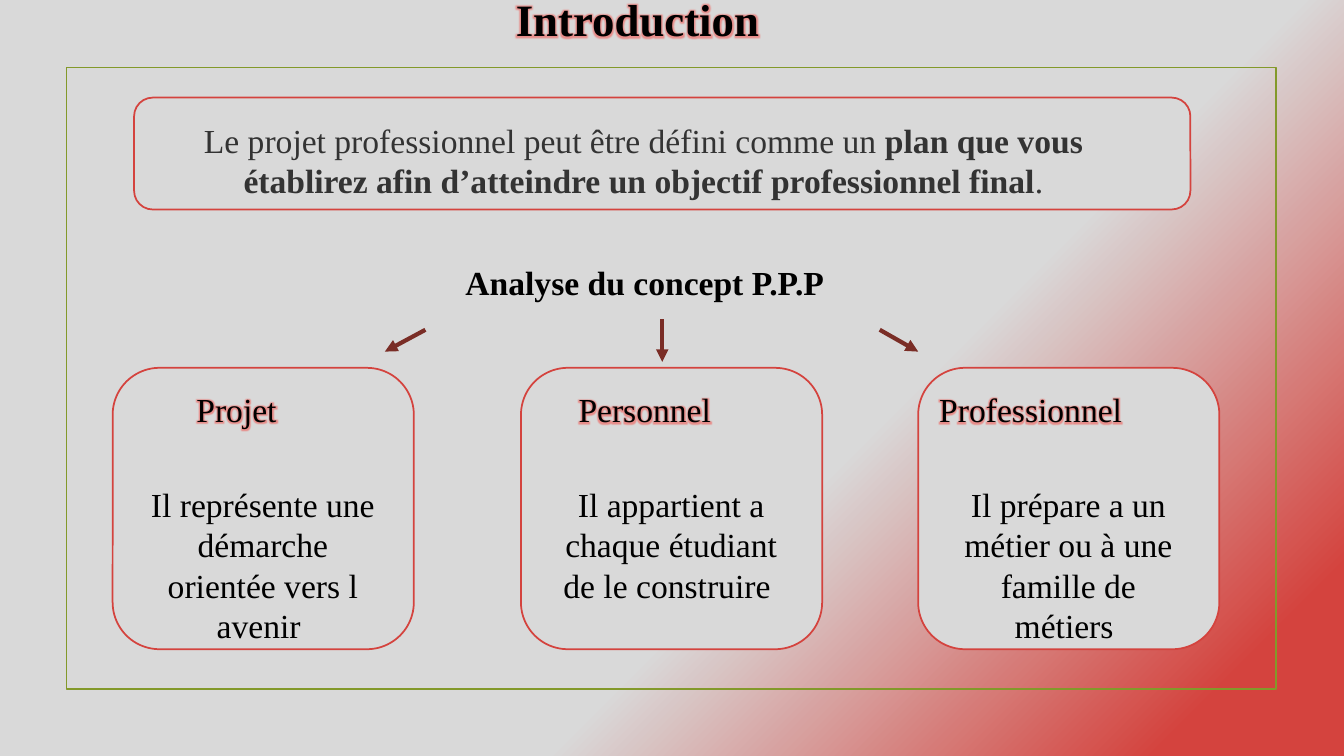
"""Build the introduction slide about the professional project."""
from lxml.etree import SubElement
from pptx import Presentation
from pptx.dml.color import RGBColor
from pptx.enum.shapes import MSO_CONNECTOR as Connector, MSO_SHAPE as Shape
from pptx.enum.text import MSO_AUTO_SIZE as AutoSize, PP_ALIGN as Align
from pptx.oxml import parse_xml
from pptx.oxml.ns import nsdecls, qn
from pptx.util import Cm, Pt

RED, GREY, GREEN, BROWN, BLACK, DARK = "D4433E", "D9D9D9", "83992A", "7A2D26", "000000", "333333"
BACKGROUND_STOPS = [(2, GREY), (32, GREY), (62, GREY), (91, RED)]
CARD_TOP, CARD_WIDTH, CARD_HEIGHT = 9.27, 7.59, 7.09
CARDS = [
    (2.84, 4.7, 5.23, "Projet", "Il représente une démarche orientée vers l avenir "),
    (13.13, 14.33, 5.23, "Personnel", "Il appartient a chaque étudiant de le construire "),
    (23.14, 23.42, 7.24, "Professionnel", "Il prépare a un métier ou à une famille de métiers "),
]
ARROWS = [(10.72, 8.31, 9.7, 8.86), (16.69, 8.05, 16.69, 9.12), (22.17, 8.31, 23.14, 8.86)]
DEFINITION = [
    ("Le projet professionnel peut être défini comme un ", False),
    ("plan que vous établirez afin d’atteindre un objectif professionnel final", True),
    (".", False),
]


def color(value):
    """Return the colour for a hex string."""
    return RGBColor.from_string(value)


def set_attributes(target, values):
    """Set each attribute named in a dict."""
    for name, value in values.items():
        setattr(target, name, value)


def paint_background(slide):
    """Fill the background with the diagonal gradient."""
    slide.background.fill.gradient()
    gradient = slide.element.find(".//" + qn("a:gradFill"))
    stops = gradient.find(qn("a:gsLst"))
    for stop in list(stops):
        stops.remove(stop)
    for position, value in BACKGROUND_STOPS:
        stop = SubElement(stops, qn("a:gs"), pos=str(position * 1000))
        SubElement(stop, qn("a:srgbClr"), val=value)
    set_direction = gradient.find(qn("a:lin")).set
    set_direction("ang", str(45 * 60000))
    set_direction("scaled", "0")


def add_box(slide, kind, box, line, fill=None):
    """Add an outlined shape, filled when a colour is given."""
    shape = slide.shapes.add_shape(kind, *map(Cm, box))
    shape.shadow.inherit = False
    if fill:
        shape.fill.solid()
        shape.fill.fore_color.rgb = color(fill)
    else:
        shape.fill.background()
    shape.line.color.rgb = color(line)
    shape.line.width = Pt(1.25)


def add_glow(run):
    """Put a soft red glow around the letters of a run."""
    fill = run.font._element.find(qn("a:solidFill"))
    fill.addnext(parse_xml(
        f'<a:effectLst {nsdecls("a")}><a:glow rad="63500"><a:srgbClr val="{RED}">'
        '<a:satMod val="175000"/><a:alpha val="40000"/></a:srgbClr></a:glow></a:effectLst>'))


def add_text(slide, box, runs, align=Align.LEFT, size=24, ink=BLACK, glow=False):
    """Add a wrapping text box made of (text, bold) runs."""
    frame = slide.shapes.add_textbox(*map(Cm, box)).text_frame
    set_attributes(frame, {"word_wrap": True, "auto_size": AutoSize.SHAPE_TO_FIT_TEXT})
    paragraph = frame.paragraphs[0]
    paragraph.alignment = align
    for text, bold in runs:
        run = paragraph.add_run()
        run.text = text
        set_attributes(run.font, {"name": "Times New Roman", "size": Pt(size), "bold": bold})
        run.font.color.rgb = color(ink)
        if glow:
            add_glow(run)


def add_arrow(slide, ends):
    """Add a straight brown arrow."""
    connector = slide.shapes.add_connector(Connector.STRAIGHT, *map(Cm, ends))
    connector.line.color.rgb = color(BROWN)
    connector.line.width = Pt(3)
    SubElement(connector.line._get_or_add_ln(), qn("a:tailEnd"), type="triangle")
    SubElement(connector._element.spPr, qn("a:effectLst"))


def add_card(slide, left, title_left, title_width, title, body):
    """Add a rounded card with a glowing title and a centred body."""
    add_box(slide, Shape.ROUNDED_RECTANGLE, (left, CARD_TOP, CARD_WIDTH, CARD_HEIGHT), RED, GREY)
    add_text(slide, (title_left, 9.68, title_width, 1.27), [(title, False)], glow=True)
    add_text(slide, (left + 0.7, 12.07, 6.17, 4.37), [(body, False)], Align.CENTER)


def main():
    """Build and save the presentation."""
    presentation = Presentation()
    set_attributes(presentation, {"slide_width": Cm(33.87), "slide_height": Cm(19.05)})
    slide = presentation.slides.add_slide(presentation.slide_layouts[6])
    paint_background(slide)
    add_box(slide, Shape.RECTANGLE, (1.68, 1.7, 30.48, 15.67), GREEN)
    add_text(slide, (11.48, 6.48, 16.31, 1.27), [("Analyse du concept P.P.P", True)])
    for card in CARDS:
        add_card(slide, *card)
    add_text(slide, (12.75, -0.33, 14.53, 1.63), [("Introduction", True)], size=32, glow=True)
    add_box(slide, Shape.ROUNDED_RECTANGLE, (3.38, 2.46, 26.62, 2.82), RED, GREY)
    add_text(slide, (3.86, 2.9, 24.71, 2.31), DEFINITION, Align.CENTER, ink=DARK)
    for ends in ARROWS:
        add_arrow(slide, ends)
    presentation.save("out.pptx")


if __name__ == "__main__":
    main()
